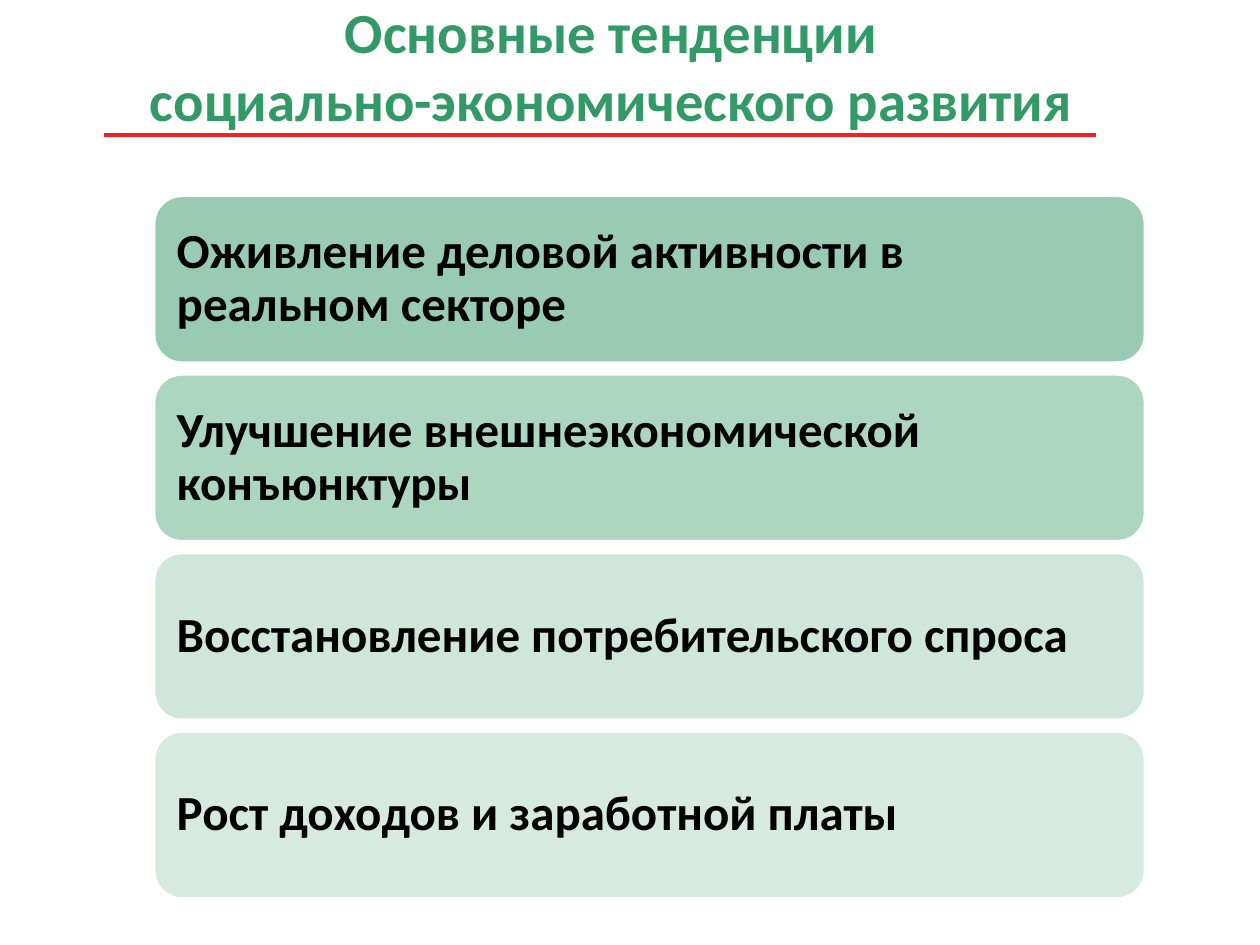
from lxml import etree
from pptx import Presentation
from pptx.dml.color import RGBColor
from pptx.enum import shapes, text
from pptx.oxml.ns import qn
from pptx.util import Cm, Pt

# Content
HEAD = "Основные тенденции\vсоциально-экономического развития"
TRENDS = [  # wording, opacity in percent
    ("Оживление деловой активности в реальном секторе", 50),
    ("Улучшение внешнеэкономической конъюнктуры", 40),
    ("Восстановление потребительского спроса", 23),
    ("Рост доходов и заработной платы", 20),
]
GREEN, RED, WHITE, BLACK = "339966", "F22222", "FFFFFF", "000000"
LEFT, TOP, WIDE, HIGH, STEP = 3.1, 3.94, 19.99, 3.38, 3.6


def paint(part, color):
    """Give a fill, line fill or font a solid colour."""
    fill = getattr(part, "fill", part)
    fill.solid()
    fill.fore_color.rgb = RGBColor.from_string(color)


def fade(shape, share):
    color = shape.fill._xPr.find(qn("a:solidFill"))[0]
    etree.SubElement(color, qn("a:alpha"), val=str(share * 1000))


def style(run, size, color):
    run.font.name, run.font.size, run.font.bold = "Calibri", Pt(size), True
    paint(run.font, color)


def shade(run):
    """Cast a soft shadow below the letters."""
    props = run.font._rPr
    glow = etree.Element(qn("a:effectLst"))
    drop = etree.SubElement(glow, qn("a:outerShdw"), blurRad="38100",
                            dist="38100", dir="2700000", algn="tl")
    color = etree.SubElement(drop, qn("a:srgbClr"), val=BLACK)
    etree.SubElement(color, qn("a:alpha"), val="43000")
    props.find(qn("a:solidFill")).addnext(glow)


deck = Presentation()
deck.slide_width, deck.slide_height = Cm(25.4), Cm(19.05)
slide = deck.slides.add_slide(deck.slide_layouts[5])

# Title
title = slide.shapes.title
title.left, title.top, title.width, title.height = Cm(0.89), Cm(-0.28), Cm(22.86), Cm(3.18)
frame = title.text_frame
frame.text = HEAD
frame.auto_size = text.MSO_AUTO_SIZE.NONE
frame.vertical_anchor = text.MSO_ANCHOR.MIDDLE
frame.paragraphs[0].alignment = text.PP_ALIGN.CENTER
for run in frame.paragraphs[0].runs:
    style(run, 32.4, GREEN)
    shade(run)

# Red rule, behind the title
rule = slide.shapes.add_connector(shapes.MSO_CONNECTOR.STRAIGHT,
                                  Cm(2.1), Cm(2.72), Cm(22.1), Cm(2.72))
paint(rule.line, RED)
rule.line.width = Pt(2.75)
etree.SubElement(rule._element.spPr, qn("a:effectLst"))
title._element.addprevious(rule._element)

# Trend cards
for i, (words, share) in enumerate(TRENDS):
    card = slide.shapes.add_shape(shapes.MSO_SHAPE.ROUNDED_RECTANGLE, Cm(LEFT),
                                  Cm(TOP + i * STEP), Cm(WIDE), Cm(HIGH))
    card.shadow.inherit = False
    paint(card, GREEN)
    fade(card, share)
    paint(card.line, WHITE)
    card.line.width = Pt(2)
    frame = card.text_frame
    frame.text = words
    frame.word_wrap = True
    frame.vertical_anchor = text.MSO_ANCHOR.MIDDLE
    frame.margin_left = frame.margin_right = Cm(0.3)
    frame.margin_top = frame.margin_bottom = Cm(0.3)
    para = frame.paragraphs[0]
    para.alignment = text.PP_ALIGN.LEFT
    para.line_spacing = 0.9
    style(para.runs[0], 28, BLACK)

deck.save("out.pptx")
